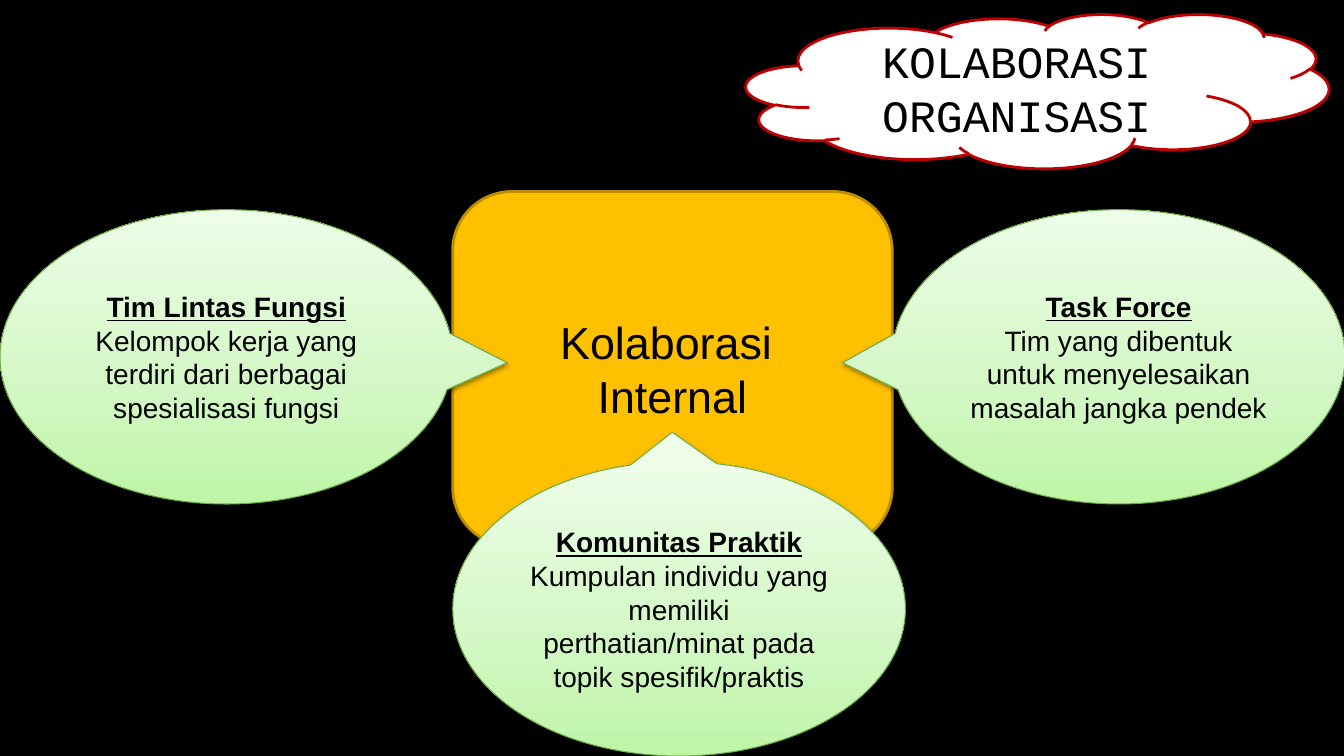
"""Builds the slide on internal collaboration in an organisation."""
from copy import deepcopy

from pptx import Presentation
from pptx.dml.color import RGBColor
from pptx.enum.shapes import MSO_SHAPE
from pptx.enum.text import MSO_ANCHOR, MSO_AUTO_SIZE, PP_ALIGN
from pptx.oxml import parse_xml
from pptx.oxml.ns import nsdecls, qn
from pptx.util import Inches, Pt

COLORS = {
    "background": "000000",
    "text": "000000",
    "cloud": "FFFFFF",
    "cloud_line": "C00000",
    "center": "FFC000",
    "center_line": "BD8E00",
    "callout_line": "6DAC43",
    "shadow": "000000",
}
CALLOUT_GRADIENT = [(0, "BEF5A7"), (0.35, "D1F7C2"), (1, "EDFDE7")]
CALLOUT_SIZE = (4.49, 2.92)
CALLOUTS = [
    (0, 2.08, (0.62, 0.02), "Tim Lintas Fungsi",
     "Kelompok kerja yang terdiri dari berbagai spesialisasi fungsi"),
    (8.85, 2.08, (-0.61, 0.02), "Task Force",
     "Tim yang dibentuk untuk menyelesaikan masalah jangka pendek"),
    (4.49, 4.58, (-0.015, -0.6), "Komunitas Praktik",
     "Kumpulan individu yang memiliki perthatian/minat pada topik spesifik/praktis"),
]


def color(name):
    """Return the named colour."""
    return RGBColor.from_string(COLORS[name])


def write_text(shape, text, size, font="Arial"):
    """Write centred text into a shape."""
    frame = shape.text_frame
    frame.text = text
    frame.word_wrap = True
    frame.vertical_anchor = MSO_ANCHOR.MIDDLE
    for paragraph in frame.paragraphs:
        paragraph.alignment = PP_ALIGN.CENTER
        for run in paragraph.runs:
            run.font.size = Pt(size)
            run.font.name = font
            run.font.color.rgb = color("text")


def add_outlined_shape(slide, kind, box, line, width):
    """Add a preset shape with an outline and no shadow."""
    shape = slide.shapes.add_shape(kind, *map(Inches, box))
    shape.shadow.inherit = False
    shape.line.color.rgb = color(line)
    shape.line.width = Pt(width)
    return shape


def add_solid_shape(slide, kind, box, fill, line):
    """Add an outlined shape with a solid fill."""
    shape = add_outlined_shape(slide, kind, box, line, 2)
    shape.fill.solid()
    shape.fill.fore_color.rgb = color(fill)
    return shape


def fill_gradient(shape):
    """Fill a shape with the three-stop callout gradient."""
    shape.fill.gradient()
    shape.fill.gradient_angle = 90
    stop_list = shape._element.spPr.find(qn("a:gradFill")).find(qn("a:gsLst"))
    stop_list.append(deepcopy(stop_list[-1]))
    for stop, (position, value) in zip(shape.fill.gradient_stops, CALLOUT_GRADIENT):
        stop.position = position
        stop.color.rgb = RGBColor.from_string(value)


def add_shadow(shape):
    """Give a shape a soft shadow that falls downwards."""
    shape._element.spPr.find(qn("a:effectLst")).append(parse_xml(
        f'<a:outerShdw {nsdecls("a")} blurRad="{Pt(3.1)}" dist="{Pt(1.6)}" '
        f'dir="5400000" rotWithShape="0"><a:srgbClr val="{COLORS["shadow"]}">'
        '<a:alpha val="38000"/></a:srgbClr></a:outerShdw>'))


def add_callout(slide, left, top, pointer, heading, description):
    """Add an oval callout with an underlined heading and a description."""
    shape = add_outlined_shape(slide, MSO_SHAPE.OVAL_CALLOUT,
                               (left, top, *CALLOUT_SIZE), "callout_line", 0.75)
    shape.adjustments[0], shape.adjustments[1] = pointer
    fill_gradient(shape)
    add_shadow(shape)
    write_text(shape, f"{heading}\n{description}", 20)
    heading_font = shape.text_frame.paragraphs[0].runs[0].font
    heading_font.bold = True
    heading_font.underline = True


def place_title(slide, text, box):
    """Move the title placeholder and format its text."""
    title = slide.shapes.title
    title.left, title.top, title.width, title.height = map(Inches, box)
    write_text(title, text, 32, "Courier New")
    title.text_frame.auto_size = MSO_AUTO_SIZE.NONE
    title.text_frame.paragraphs[0].line_spacing = 1.0
    title.text_frame.paragraphs[0].space_before = Pt(0)
    tree = slide.shapes._spTree
    tree.remove(title._element)
    tree.append(title._element)


def main():
    """Build and save the slide."""
    presentation = Presentation()
    presentation.slide_width = Inches(13.33)
    presentation.slide_height = Inches(7.5)
    slide = presentation.slides.add_slide(presentation.slide_layouts[5])
    slide.background.fill.solid()
    slide.background.fill.fore_color.rgb = color("background")

    add_solid_shape(slide, MSO_SHAPE.CLOUD, (7.4, 0.14, 5.78, 1.53),
                    "cloud", "cloud_line")
    place_title(slide, "KOLABORASI ORGANISASI", (8.2, 0.37, 3.77, 1))
    center = add_solid_shape(slide, MSO_SHAPE.ROUNDED_RECTANGLE,
                             (4.49, 1.9, 4.36, 3.52), "center", "center_line")
    write_text(center, "Kolaborasi \nInternal", 32)
    for callout in CALLOUTS:
        add_callout(slide, *callout)

    presentation.save("out.pptx")


if __name__ == "__main__":
    main()
